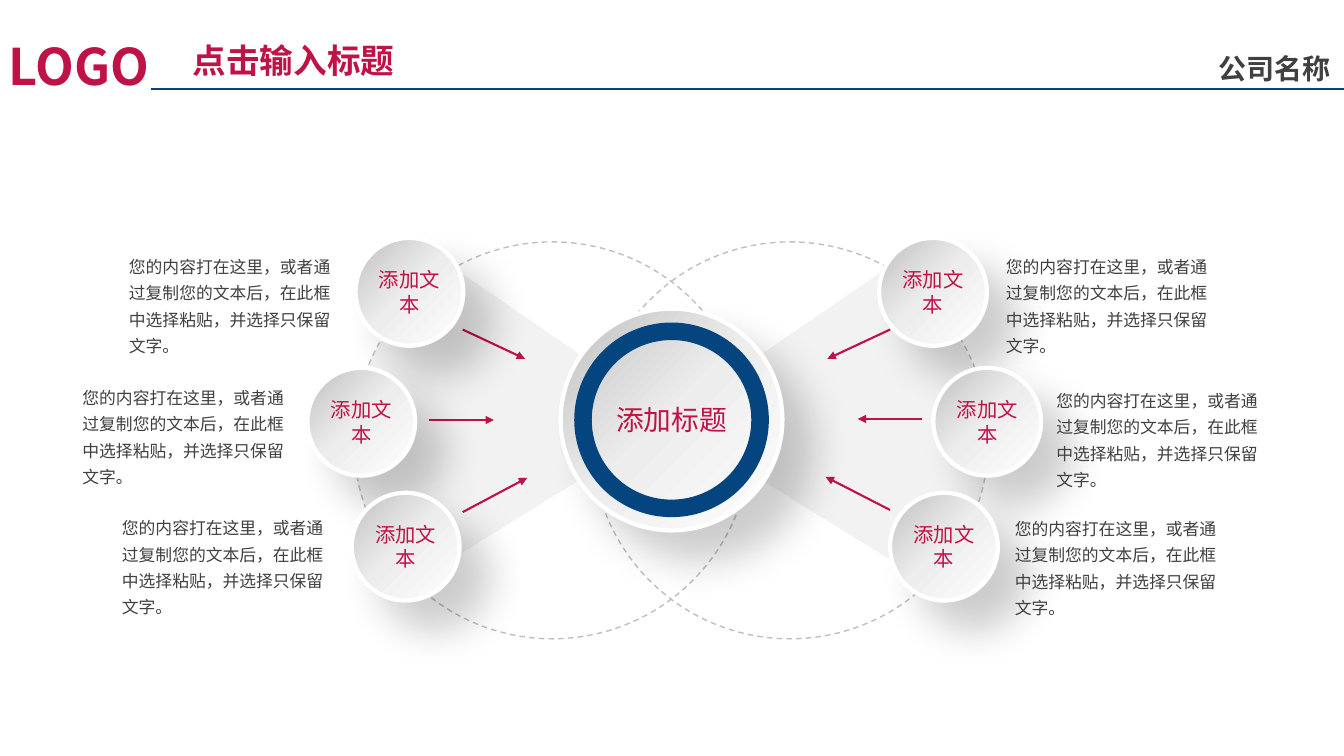
import copy
from dataclasses import dataclass

import pptx
import pptx.dml.color
import pptx.enum.dml
import pptx.enum.shapes
import pptx.enum.text
import pptx.oxml
import pptx.oxml.ns
import pptx.util

Pt = pptx.util.Pt
RGBColor = pptx.dml.color.RGBColor
Shape = pptx.enum.shapes.MSO_SHAPE
Align = pptx.enum.text.PP_ALIGN
qn = pptx.oxml.ns.qn

CRIMSON = RGBColor(0xBF, 0x13, 0x47)
NAVY = RGBColor(0x04, 0x44, 0x7F)
CHARCOAL = RGBColor(0x40, 0x40, 0x40)
DASH_GRAY = RGBColor(0xBF, 0xBF, 0xBF)
WEDGE_GRAY = RGBColor(0xF2, 0xF2, 0xF2)
DISC_DARK = RGBColor(0xC0, 0xC0, 0xC0)
DISC_MIDDLE = RGBColor(0xED, 0xED, 0xED)
WHITE = RGBColor(0xFF, 0xFF, 0xFF)

FONT = "Noto Sans CJK SC"
NOTE = "您的内容打在这里，或者通过复制您的文本后，在此框中选择粘贴，并选择只保留文字。"
NODE_SIZE = 77
ORBIT_SIZE = 283.5
MIRROR_SUM = 958
A_NS = pptx.oxml.ns.nsdecls("a")
SHADOW = (
    f'<a:outerShdw {A_NS} blurRad="{Pt(29)}" dist="{Pt(29)}" dir="2700000" algn="tl" '
    'rotWithShape="0"><a:srgbClr val="000000"><a:alpha val="20000"/></a:srgbClr></a:outerShdw>'
)

Point = tuple[float, float]


@dataclass
class Branch:
    node: Point
    note: Point
    arrow_from: Point
    arrow_to: Point


@dataclass
class Heading:
    text: str
    left: float
    top: float
    width: float
    height: float
    size: float
    color: RGBColor


BRANCHES = [
    Branch((254, 170), (85, 175.7), (330.5, 235.4), (375, 256.3)),
    Branch((219.6, 262.8), (51.8, 269.3), (306.7, 300), (352.8, 300)),
    Branch((251.3, 352), (80, 362.2), (330.5, 365.8), (376.6, 341.3)),
    Branch((628, 170), (711.4, 175.7), (635.8, 235.4), (591, 256.3)),
    Branch((666.7, 262.8), (747.4, 271.4), (658.8, 299.3), (612.7, 299.3)),
    Branch((635.8, 352), (717.8, 362.9), (635.8, 364.3), (589.7, 340.6)),
]
TITLE = Heading("点击输入标题", 131.8, 25.5, 157, 34.5, 24, CRIMSON)
HEADINGS = [
    Heading("公司名称", 864.7, 33.8, 94.5, 29.5, 20, CHARCOAL),
    Heading("LOGO", 0, 22.5, 118, 49, 36, CRIMSON),
]
# Wedge outline: a one-point step is a line, a three-point step is a curve.
WEDGE_START = (685.4, 243.4)
WEDGE_STEPS = [
    [(663, 212.4), (668.2, 214.6), (633.6, 191.5)],
    [(475.2, 300.2)],
    [(662.4, 416.2)],
    [(707.8, 360.7), (703.4, 341.3), (705.6, 312.5)],
    [(704.2, 289.4), (699, 263.5), WEDGE_START],
]


def apply(target: object, values: dict[str, object]) -> None:
    for name, value in values.items():
        setattr(target, name, value)


def write(shape, text: str, size: float, color: RGBColor, frame: dict, align=Align.LEFT,
          spacing: float = 1.0, bold: bool = False) -> None:
    apply(shape.text_frame, frame)
    para = shape.text_frame.paragraphs[0]
    apply(para, {"alignment": align, "line_spacing": spacing})
    span = para.add_run()
    span.text = text
    apply(span.font, {"size": Pt(size), "name": FONT, "bold": bold})
    span.font.color.rgb = color
    east_asian = pptx.oxml.parse_xml(f'<a:ea {A_NS} typeface="{FONT}"/>')
    span.font._element.append(east_asian)


def add_outline(shapes, preset, left: float, top: float, size: float):
    shape = shapes.add_shape(preset, Pt(left), Pt(top), Pt(size), Pt(size))
    shape.shadow.inherit = False
    return shape


def curve_points(start: Point, step: list[Point], count: int = 16) -> list[Point]:
    """Sample a cubic curve; a straight step passes through unchanged."""
    if len(step) == 1:
        return step
    points = []
    for index in range(1, count + 1):
        t = index / count
        weights = ((1 - t) ** 3, 3 * t * (1 - t) ** 2, 3 * t * t * (1 - t), t ** 3)
        points.append(tuple(sum(w * p[axis] for w, p in zip(weights, [start, *step]))
                            for axis in (0, 1)))
    return points


def add_wedge(shapes, mirrored: bool) -> None:
    points = [WEDGE_START]
    for step in WEDGE_STEPS:
        points += curve_points(points[-1], step)
    vertices = [(Pt(MIRROR_SUM - x if mirrored else x), Pt(y)) for x, y in points]
    builder = shapes.build_freeform(*vertices[0])
    builder.add_line_segments(vertices[1:], close=True)
    wedge = builder.convert_to_shape()
    wedge.shadow.inherit = False
    wedge.fill.solid()
    wedge.fill.fore_color.rgb = WEDGE_GRAY
    wedge.line.fill.background()


def add_orbit(shapes, left: float) -> None:
    orbit = add_outline(shapes, Shape.OVAL, left, 172.8, ORBIT_SIZE)
    orbit.fill.background()
    orbit.line.color.rgb = DASH_GRAY
    apply(orbit.line, {"width": Pt(1), "dash_style": pptx.enum.dml.MSO_LINE.DASH})


def add_line(shapes, start: Point, end: Point, color: RGBColor, width: float,
             arrow: bool = False) -> None:
    line = shapes.add_connector(pptx.enum.shapes.MSO_CONNECTOR.STRAIGHT,
                                *(Pt(value) for value in (*start, *end)))
    line.line.color.rgb = color
    line.line.width = Pt(width)
    if arrow:
        head = pptx.oxml.parse_xml(f'<a:tailEnd {A_NS} type="triangle"/>')
        line.line._get_or_add_ln().append(head)
    line._element.spPr.append(pptx.oxml.parse_xml(f"<a:effectLst {A_NS}/>"))


def add_disc(shapes, left: float, top: float, size: float, text: str, text_size: float) -> None:
    """Draw a shaded, rimmed circle with a soft shadow and a centred label."""
    disc = add_outline(shapes, Shape.OVAL, left, top, size)
    disc.fill.gradient()
    disc.fill.gradient_angle = 315
    stop_list = disc._element.spPr.find(".//" + qn("a:gsLst"))
    stop_list.insert(1, copy.deepcopy(stop_list[0]))
    shades = [(0, DISC_DARK), (0.49, DISC_MIDDLE), (1, WHITE)]
    for stop, (position, color) in zip(disc.fill.gradient_stops, shades):
        stop.position = position
        stop.color.rgb = color
    disc.line.color.rgb = WHITE
    disc.line.width = Pt(3)
    effects = disc._element.spPr.find(qn("a:effectLst"))
    effects.append(pptx.oxml.parse_xml(SHADOW))
    frame = {"margin_left": 0, "margin_right": 0, "word_wrap": True,
             "vertical_anchor": pptx.enum.text.MSO_ANCHOR.MIDDLE}
    write(disc, text, text_size, CRIMSON, frame, Align.CENTER)


def add_note(shapes, left: float, top: float) -> None:
    box = shapes.add_textbox(Pt(left), Pt(top), Pt(167), Pt(83))
    write(box, NOTE, 12, CHARCOAL, {"word_wrap": True}, spacing=1.3)


def add_hub(shapes) -> None:
    hub = shapes.add_group_shape()
    add_disc(hub.shapes, 400.5, 220.5, 158.4, "添加标题", 19.8)
    ring = add_outline(hub.shapes, Shape.DONUT, 410.2, 230.4, 139)
    ring.adjustments[0] = 0.09
    ring.fill.solid()
    ring.fill.fore_color.rgb = NAVY
    ring.line.fill.background()


def fill_heading(box, heading: Heading) -> None:
    apply(box, {name: Pt(getattr(heading, name)) for name in ("left", "top", "width", "height")})
    frame = {"margin_left": Pt(5.8), "margin_right": Pt(5.8),
             "margin_top": Pt(2.9), "margin_bottom": Pt(2.9), "word_wrap": False,
             "auto_size": pptx.enum.text.MSO_AUTO_SIZE.SHAPE_TO_FIT_TEXT,
             "vertical_anchor": pptx.enum.text.MSO_ANCHOR.MIDDLE}
    write(box, heading.text, heading.size, heading.color, frame, bold=True)


def main() -> None:
    deck = pptx.Presentation()
    apply(deck, {"slide_width": Pt(960), "slide_height": Pt(540)})
    page = deck.slides.add_slide(deck.slide_layouts[5])
    shapes = page.shapes
    for mirrored in (False, True):
        add_wedge(shapes, mirrored)
    for left in (252.7, 422.6):
        add_orbit(shapes, left)
    for branch in BRANCHES:
        add_line(shapes, branch.arrow_from, branch.arrow_to, CRIMSON, 1.5, arrow=True)
    for branch in BRANCHES:
        add_disc(shapes, *branch.node, NODE_SIZE, "添加文本", 14.5)
    for branch in BRANCHES:
        add_note(shapes, *branch.note)
    add_hub(shapes)
    add_line(shapes, (108, 63.5), (960, 63.5), NAVY, 1)
    fill_heading(shapes.title, TITLE)
    for heading in HEADINGS:
        fill_heading(shapes.add_textbox(0, 0, 0, 0), heading)
    deck.save("out.pptx")


if __name__ == "__main__":
    main()
